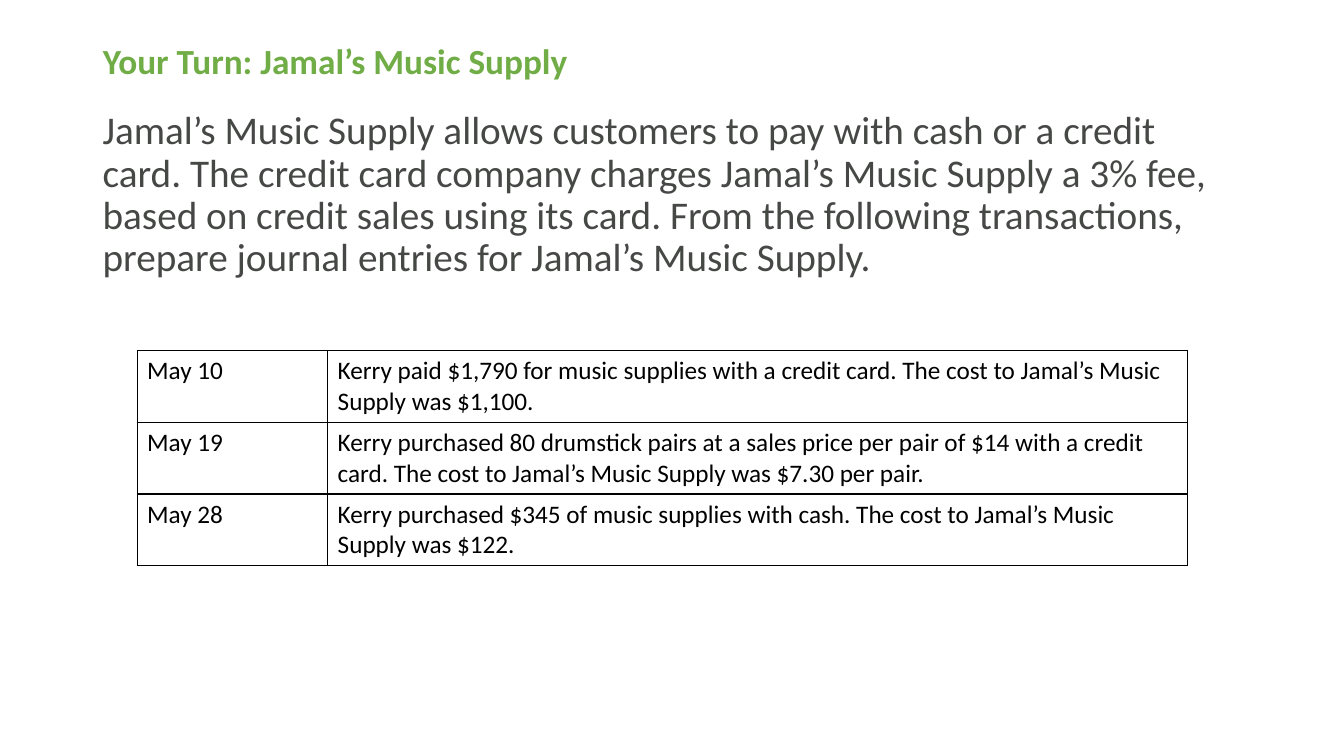
from lxml.etree import SubElement
from pptx import Presentation
from pptx.dml.color import RGBColor
from pptx.enum.text import MSO_ANCHOR, MSO_AUTO_SIZE, PP_ALIGN
from pptx.oxml.ns import qn
from pptx.util import Inches, Pt

COLORS = {"title": "70AD47", "body": "464846", "table": "000000"}
TRANSACTIONS = [
    ("May 10", "Kerry paid $1,790 for music supplies with a credit card. "
               "The cost to Jamal’s Music Supply was $1,100."),
    ("May 19", "Kerry purchased 80 drumstick pairs at a sales price per pair of $14 "
               "with a credit card. The cost to Jamal’s Music Supply was $7.30 per pair."),
    ("May 28", "Kerry purchased $345 of music supplies with cash. "
               "The cost to Jamal’s Music Supply was $122."),
]


def write(tf, text, size, color, bold=False, spacing=1.0):
    p = tf.paragraphs[0]
    p.alignment = PP_ALIGN.LEFT
    p.line_spacing = spacing
    r = p.add_run()
    r.text = text
    font = {"name": "Calibri", "size": Pt(size), "bold": bold}
    for name, value in font.items():
        setattr(r.font, name, value)
    r.font.color.rgb = RGBColor.from_string(COLORS[color])


def add_borders(cell):
    tcPr = cell._tc.get_or_add_tcPr()
    for index, side in enumerate(("a:lnL", "a:lnR", "a:lnT", "a:lnB")):
        ln = SubElement(tcPr, qn(side), w=str(Pt(1)))
        fill = SubElement(ln, qn("a:solidFill"))
        SubElement(fill, qn("a:srgbClr"), val=COLORS["table"])
        tcPr.remove(ln)
        tcPr.insert(index, ln)


prs = Presentation()
prs.slide_width = Inches(13.33)
prs.slide_height = Inches(7.5)
s = prs.slides.add_slide(prs.slide_layouts[5])

title = s.shapes.title
place = {"left": 0.92, "top": 0.4, "width": 11.5, "height": 0.46}
for name, value in place.items():
    setattr(title, name, Inches(value))
intro = s.shapes.add_textbox(Inches(0.92), Inches(1.05), Inches(11.5), Inches(4.15))

for sp, anchor in ((title, MSO_ANCHOR.MIDDLE), (intro, MSO_ANCHOR.TOP)):
    frame = {"word_wrap": True, "auto_size": MSO_AUTO_SIZE.NONE, "vertical_anchor": anchor}
    for name, value in frame.items():
        setattr(sp.text_frame, name, value)

write(title.text_frame, "Your Turn: Jamal’s Music Supply", 25.2, "title", True, 0.9)
write(intro.text_frame,
      "Jamal’s Music Supply allows customers to pay with cash or a credit card. "
      "The credit card company charges Jamal’s Music Supply a 3% fee, based on credit "
      "sales using its card. From the following transactions, prepare journal entries "
      "for Jamal’s Music Supply.", 28, "body", spacing=0.9)

table = s.shapes.add_table(len(TRANSACTIONS), 2, Inches(1.36), Inches(3.48),
                           Inches(10.42), Inches(2.1)).table
table.first_row = False
table.horz_banding = False
for column, width in zip(table.columns, (1.89, 8.53)):
    column.width = Inches(width)
for row, texts in zip(table.rows, TRANSACTIONS):
    row.height = Inches(0.7)
    for cell, text in zip(row.cells, texts):
        cell.fill.background()
        add_borders(cell)
        write(cell.text_frame, text, 18, "table")

prs.save("out.pptx")
